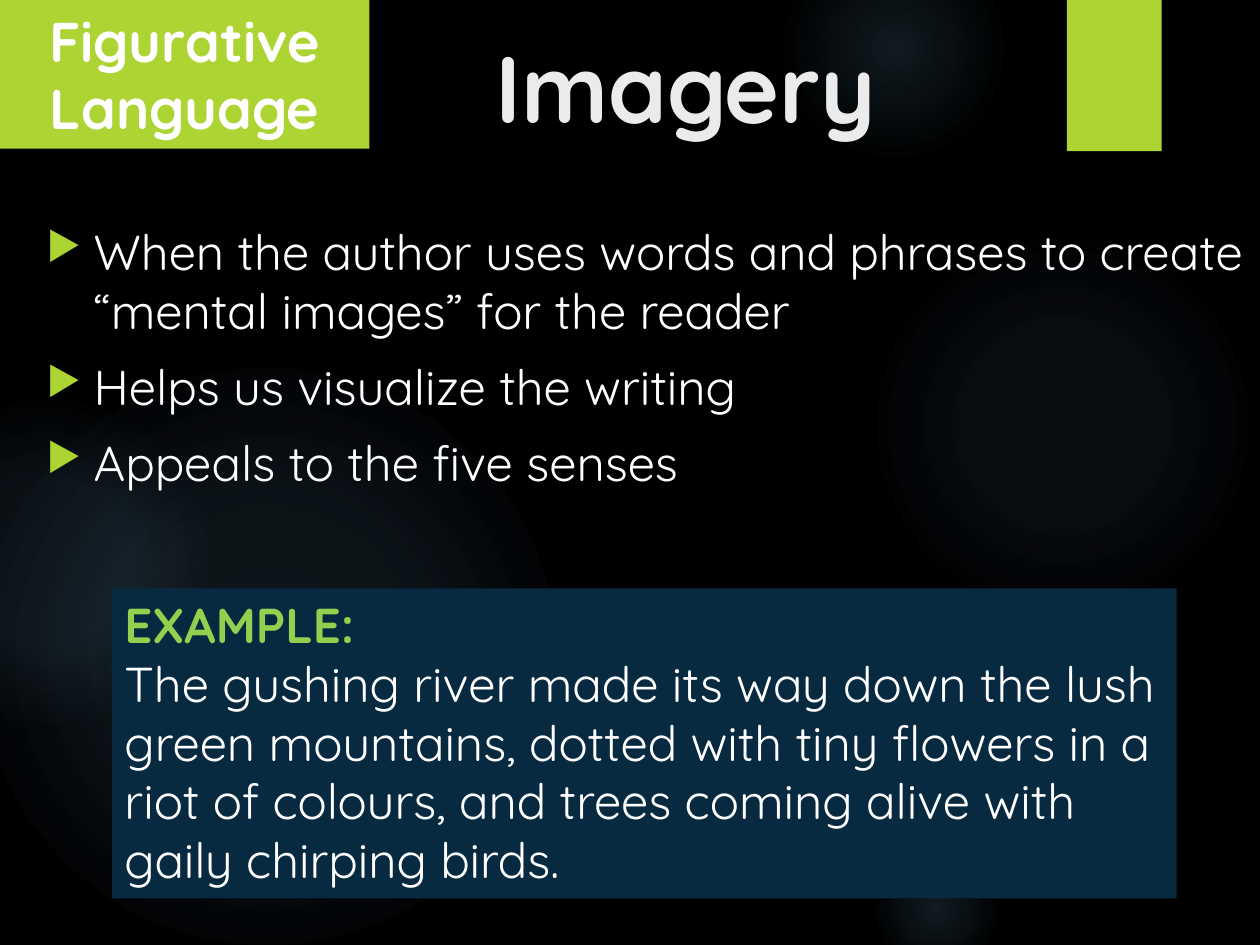
from pptx import Presentation
from pptx.dml.color import RGBColor
from pptx.enum.shapes import MSO_SHAPE
from pptx.enum.text import MSO_AUTO_SIZE, PP_ALIGN
from pptx.oxml import parse_xml
from pptx.oxml.ns import nsdecls, qn
from pptx.util import Cm, Pt

RECT, OVAL = MSO_SHAPE.RECTANGLE, MSO_SHAPE.OVAL
CENTER, LEFT = PP_ALIGN.CENTER, PP_ALIGN.LEFT
GROW, FIXED = MSO_AUTO_SIZE.SHAPE_TO_FIT_TEXT, MSO_AUTO_SIZE.NONE
FONT = "Quicksand"
BLACK, WHITE, PALE = "000000", "FFFFFF", "EBEBEB"
LIME, GREEN, NAVY, SKY = "ACD433", "92D050", "072A40", "7AC4F0"


def rgb(value):
    return RGBColor.from_string(value)


class Deck:
    """Holds the style and the current slide, and draws each kind of element."""

    def __init__(self, prs):
        self.s = prs.slides.add_slide(prs.slide_layouts[6])
        fill = self.s.background.fill
        fill.solid()
        fill.fore_color.rgb = rgb(BLACK)

    def shape(self, kind, x, y, w, h):
        sp = self.s.shapes.add_shape(kind, Cm(x), Cm(y), Cm(w), Cm(h))
        sp.shadow.inherit = False
        sp.line.fill.background()
        return sp

    def block(self, x, y, w, h, color):
        sp = self.shape(RECT, x, y, w, h)
        sp.fill.solid()
        sp.fill.fore_color.rgb = rgb(color)

    def glow(self, x, y, size, inner, middle, end):
        sp = self.shape(OVAL, x, y, size, size)
        sp.fill.background()
        stops = "".join(
            f'<a:gs pos="{pos * 1000}"><a:srgbClr val="{SKY}">'
            f'<a:alpha val="{alpha * 1000}"/></a:srgbClr></a:gs>'
            for pos, alpha in ((0, inner), (36, middle), (end, 0)))
        grad = parse_xml(
            f'<a:gradFill {nsdecls("a")} rotWithShape="1"><a:gsLst>{stops}</a:gsLst>'
            '<a:path path="circle"><a:fillToRect l="50000" t="50000" r="50000" b="50000"/>'
            '</a:path></a:gradFill>')
        spPr = sp.element.spPr
        spPr.replace(spPr.find(qn("a:noFill")), grad)

    def text(self, x, y, w, h, lines, size, align=LEFT, fill=None, bullets=False):
        sp = self.s.shapes.add_textbox(Cm(x), Cm(y), Cm(w), Cm(h))
        tf = sp.text_frame
        tf.word_wrap = True
        tf.auto_size = GROW if fill else FIXED
        if fill:
            sp.fill.solid()
            sp.fill.fore_color.rgb = rgb(fill)
        for i, (words, color, bold) in enumerate(lines):
            p = tf.add_paragraph() if i else tf.paragraphs[0]
            p.alignment = align
            if bullets:
                self.bullet(p)
            r = p.add_run()
            r.text = words
            r.font.name, r.font.size, r.font.bold = FONT, Pt(size), bold
            r.font.color.rgb = rgb(color)

    def bullet(self, p):
        p.space_before = Pt(10)
        pPr = p._p.get_or_add_pPr()
        indent = Cm(0.95)
        pPr.set("marL", str(indent))
        pPr.set("indent", str(-indent))
        for tag in (f'buClr {nsdecls("a")}><a:srgbClr val="{LIME}"/></a:buClr',
                    f'buSzPct {nsdecls("a")} val="80000"/',
                    f'buChar {nsdecls("a")} char="▶"/'):
            pPr.append(parse_xml(f"<a:{tag}>"))


def main():
    prs = Presentation()
    prs.slide_width, prs.slide_height = Cm(25.4), Cm(19.05)
    deck = Deck(prs)

    for glow in ((17.5, 4.65, 7.82, 7, 6, 69),
                 (15.8, -1.27, 4.45, 14, 7, 73),
                 (17.5, 16.94, 2.74, 14, 7, 66),
                 (-0.43, 7.42, 11.63, 11, 10, 75),
                 (-2.34, 8.05, 6.55, 8, 8, 72)):
        deck.glow(*glow)
    deck.block(21.51, 0, 1.91, 3.05, LIME)

    deck.text(9.73, 0.46, 19.61, 3.89, [("Imagery", PALE, True)], 54)
    points = ("When the author uses words and phrases to create “mental images” for the reader",
              "Helps us visualize the writing",
              "Appeals to the five senses")
    deck.text(0.69, 4.34, 25.32, 11.66, [(point, WHITE, False) for point in points],
              28, bullets=True)
    deck.text(0, 0, 7.45, 3, [("Figurative Language", WHITE, True)], 32, CENTER, LIME)
    example = ("The gushing river made its way down the lush green mountains, dotted with tiny "
               "flowers in a riot of colours, and trees coming alive with gaily chirping birds.")
    deck.text(2.26, 11.86, 21.46, 6.25,
              [("EXAMPLE:", GREEN, True), (example, WHITE, False)], 28, fill=NAVY)

    prs.save("out.pptx")


if __name__ == "__main__":
    main()
